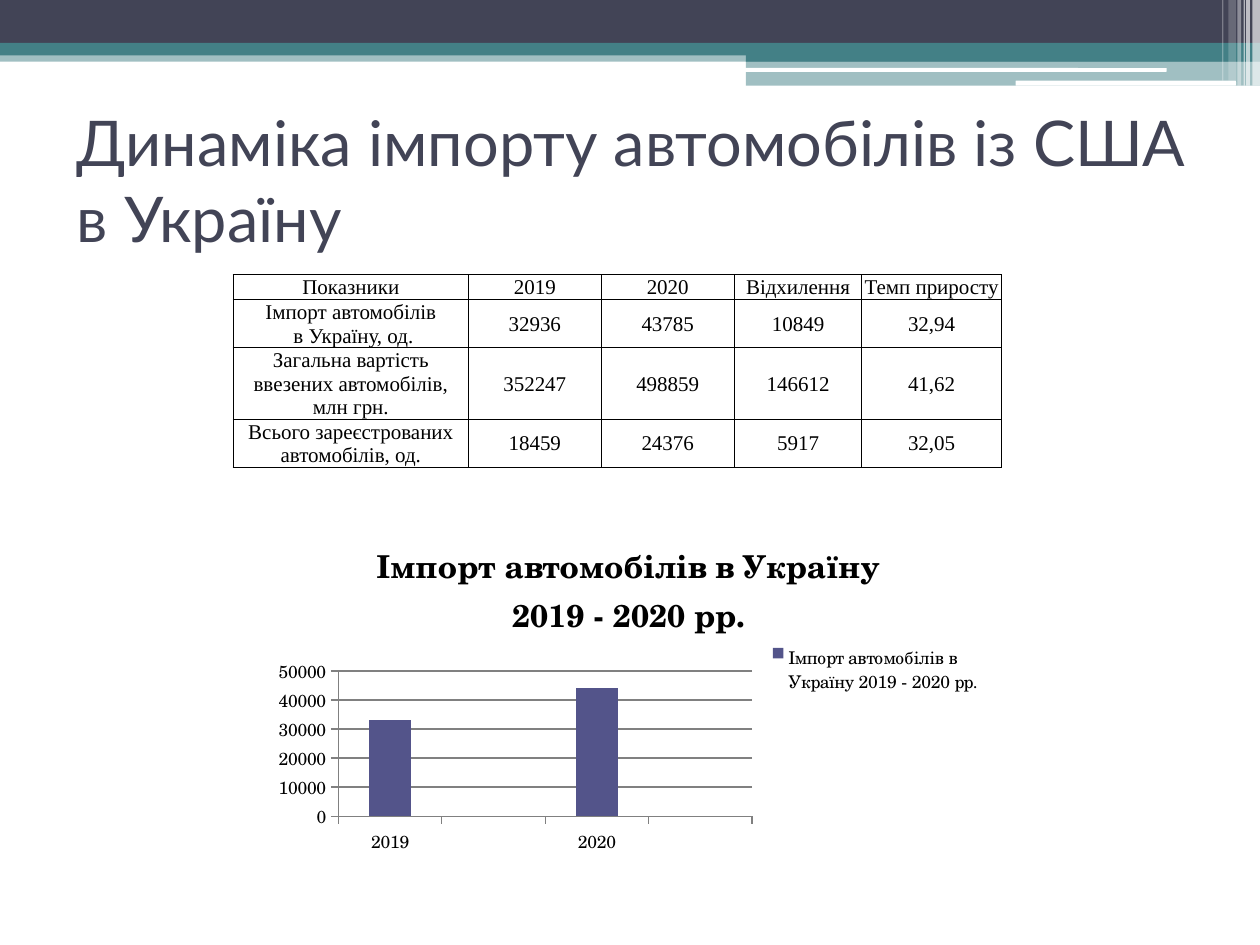
"""Build a slide on car imports to Ukraine with a table and a column chart."""
from lxml import etree
from pptx import Presentation
from pptx.chart.data import CategoryChartData
from pptx.dml.color import RGBColor
from pptx.enum import chart as ch, shapes, text
from pptx.oxml import parse_xml
from pptx.oxml.ns import nsdecls, qn
from pptx.util import Inches, Pt

DARK = RGBColor(0x42, 0x44, 0x56)
TEAL = RGBColor(0x43, 0x80, 0x86)
WHITE = RGBColor(0xFF, 0xFF, 0xFF)
BLACK = RGBColor(0, 0, 0)
GREY = RGBColor(0x80, 0x80, 0x80)
BAR = RGBColor(0x53, 0x54, 0x8A)
RECT = shapes.MSO_SHAPE.RECTANGLE
ROUND = shapes.MSO_SHAPE.ROUNDED_RECTANGLE


def style(font, name, size, color, bold=False):
    font.name, font.size, font.bold = name, Pt(size), bold
    font.color.rgb = color


def place(item, x, y, w, h):
    old = item.find(qn("c:layout"))
    if old is not None:
        item.remove(old)
    inner = '<c:layoutTarget val="inner"/>' if item.tag == qn("c:plotArea") else ""
    node = parse_xml(
        f'<c:layout {nsdecls("c")}><c:manualLayout>{inner}'
        '<c:xMode val="edge"/><c:yMode val="edge"/>'
        f'<c:x val="{x}"/><c:y val="{y}"/><c:w val="{w}"/><c:h val="{h}"/>'
        '</c:manualLayout></c:layout>')
    item.insert(1 if item.tag == qn("c:legend") else 0, node)


prs = Presentation()
prs.slide_width, prs.slide_height = Inches(10), Inches(7.5)
slide = prs.slides.add_slide(prs.slide_layouts[5])

bands = [
    (RECT, 0, 0.4, 10, 0.09, TEAL, 50),
    (RECT, 0, 0, 10, 0.34, DARK, 100),
    (RECT, 0, 0.34, 10, 0.1, TEAL, 100),
    (RECT, 5.92, 0.39, 4.08, 0.1, TEAL, 100),
    (RECT, 5.92, 0.48, 4.08, 0.2, TEAL, 50),
    (ROUND, 5.91, 0.54, 3.35, 0.03, WHITE, 100),
    (ROUND, 8.06, 0.64, 1.75, 0.04, WHITE, 100),
    (RECT, 9.94, 0, 0.06, 0.68, WHITE, 65),
    (RECT, 9.89, 0, 0.03, 0.68, WHITE, 65),
    (RECT, 9.87, 0, 0.01, 0.68, WHITE, 60),
    (RECT, 9.82, 0, 0.03, 0.68, WHITE, 40),
    (RECT, 9.75, 0, 0.06, 0.64, WHITE, 20),
    (RECT, 9.7, 0, 0.01, 0.64, WHITE, 30),
]
for kind, x, y, w, h, color, alpha in bands:
    band = slide.shapes.add_shape(kind, Inches(x), Inches(y), Inches(w), Inches(h))
    band.shadow.inherit = False
    band.line.fill.background()
    band.fill.solid()
    band.fill.fore_color.rgb = color
    if alpha < 100:
        tint = band.fill._xPr.find(".//" + qn("a:srgbClr"))
        etree.SubElement(tint, qn("a:alpha")).set("val", str(alpha * 1000))

title = slide.shapes.title
title.left, title.top = Inches(0.51), Inches(0.84)
title.width, title.height = Inches(9), Inches(1.17)
frame = title.text_frame
frame.word_wrap = True
frame.margin_right = 0
frame.auto_size = text.MSO_AUTO_SIZE.NONE
frame.vertical_anchor = text.MSO_ANCHOR.MIDDLE
para = frame.paragraphs[0]
para.alignment = text.PP_ALIGN.LEFT
run = para.add_run()
run.text = "Динаміка імпорту автомобілів із США в Україну"
style(run.font, "Lato", 36, DARK)

rows = [
    ("Показники", "2019", "2020", "Відхилення", "Темп приросту"),
    ("Імпорт автомобілів\n в Україну, од.", "32936", "43785", "10849", "32,94"),
    ("Загальна вартість ввезених автомобілів, млн грн.",
     "352247", "498859", "146612", "41,62"),
    ("Всього зареєстрованих\nавтомобілів, од.", "18459", "24376", "5917", "32,05"),
]
widths = [1.87, 1.05, 1.06, 1.01, 1.11]
heights = [0.2, 0.38, 0.56, 0.38]
table = slide.shapes.add_table(
    len(rows), len(widths), Inches(1.85), Inches(2.18),
    Inches(sum(widths)), Inches(sum(heights))).table
table.first_row = table.horz_banding = False
for col, w in zip(table.columns, widths):
    col.width = Inches(w)
for row, h, words in zip(table.rows, heights, rows):
    row.height = Inches(h)
    for cell, word in zip(row.cells, words):
        cell.margin_left = cell.margin_right = cell.margin_top = Inches(0.01)
        cell.margin_bottom = 0
        cell.vertical_anchor = text.MSO_ANCHOR.MIDDLE
        para = cell.text_frame.paragraphs[0]
        para.alignment = text.PP_ALIGN.CENTER
        for i, line in enumerate(word.split("\n")):
            if i:
                para.add_line_break()
            run = para.add_run()
            run.text = line
            style(run.font, "Times New Roman", 12, BLACK)
        props = cell._tc.get_or_add_tcPr()
        for side in ("lnL", "lnR", "lnT", "lnB"):
            props.append(parse_xml(
                f'<a:{side} {nsdecls("a")} w="6350"><a:solidFill>'
                f'<a:srgbClr val="{BLACK}"/></a:solidFill></a:{side}>'))
        cell.fill.background()

name = "Імпорт автомобілів в Україну 2019 - 2020 рр."
data = CategoryChartData()
data.categories = ["2019", "", "2020", ""]
data.add_series(name, [33000, None, 44000, None])
chart = slide.shapes.add_chart(
    ch.XL_CHART_TYPE.COLUMN_CLUSTERED, Inches(2.11), Inches(4.12),
    Inches(5.76), Inches(2.68), data).chart
style(chart.font, "TeX Gyre Schola", 10, BLACK)
chart.has_title = True
run = chart.chart_title.text_frame.paragraphs[0].add_run()
run.text = name
style(run.font, "TeX Gyre Schola", 18, BLACK, True)
chart.has_legend = True
chart.legend.position = ch.XL_LEGEND_POSITION.RIGHT
chart.legend.include_in_layout = False
plot = chart.plots[0]
plot.gap_width = 150
plot.vary_by_categories = False
fill = plot.series[0].format.fill
fill.solid()
fill.fore_color.rgb = BAR
scale = chart.value_axis
scale.minimum_scale, scale.maximum_scale, scale.major_unit = 0, 50000, 10000
scale.has_major_gridlines = True
for axis in (chart.category_axis, scale):
    axis.major_tick_mark = ch.XL_TICK_MARK.OUTSIDE
    axis.format.line.color.rgb = GREY
scale.major_gridlines.format.line.color.rgb = GREY
place(chart._chartSpace.chart.plotArea, 0.1, 0.45, 0.57, 0.43)
place(chart.legend._element, 0.69, 0.36, 0.3, 0.17)

prs.save("out.pptx")
